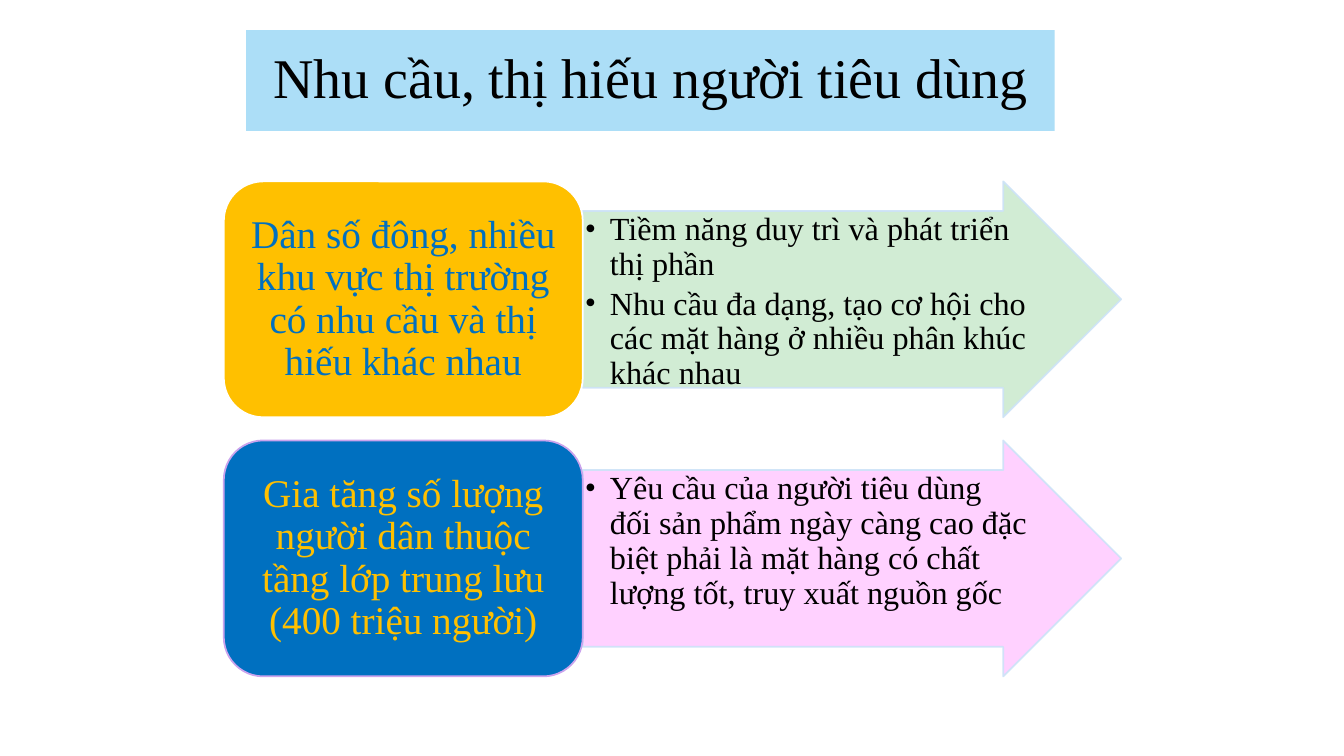
from lxml.etree import SubElement
from pptx import Presentation
from pptx.dml.color import RGBColor
from pptx.enum.shapes import MSO_SHAPE
from pptx.enum.text import MSO_ANCHOR, PP_ALIGN
from pptx.oxml.ns import qn
from pptx.util import Inches, Pt

# Content
TITLE = "Nhu cầu, thị hiếu người tiêu dùng"
ROWS = [
    {
        "label": "Dân số đông, nhiều khu vực thị trường có nhu cầu và thị hiếu khác nhau",
        "points": [
            "Tiềm năng duy trì và phát triển thị phần",
            "Nhu cầu đa dạng, tạo cơ hội cho các mặt hàng ở nhiều phân khúc khác nhau",
        ],
        "box": "amber", "edge": "white", "ink": "blue", "arrow": "green",
    },
    {
        "label": "Gia tăng số lượng người dân thuộc tầng lớp trung lưu (400 triệu người)",
        "points": [
            "Yêu cầu của người tiêu dùng đối sản phẩm ngày càng cao đặc biệt phải là "
            "mặt hàng có chất lượng tốt, truy xuất nguồn gốc",
        ],
        "box": "blue", "edge": "lilac", "ink": "amber", "arrow": "pink",
    },
]
COLORS = {
    "sky": "ACDEF7", "black": "000000", "white": "FFFFFF", "amber": "FFC000",
    "blue": "0070C0", "green": "CDEBD0", "pink": "FFCCFF", "pale": "CDE3F8",
    "lilac": "CAA3ED",
}
FONT = "Times New Roman"

# Layout, in inches
LEFT, TOP = 2.22, 1.8
BOX_W, ARROW_W = 3.56, 5.34
ROW_H, PITCH = 2.34, 2.57

deck = Presentation()
deck.slide_width, deck.slide_height = Inches(13.33), Inches(7.5)
slide = deck.slides.add_slide(deck.slide_layouts[6])


def tint(fill, color, alpha=None):
    fill.solid()
    fill.fore_color.rgb = RGBColor.from_string(COLORS[color])
    if alpha:
        node = fill._xPr.find(qn("a:solidFill"))[0]
        SubElement(node, qn("a:alpha"), val=str(alpha * 1000))


def add_box(kind, place, color, edge=None, alpha=None):
    shape = slide.shapes.add_shape(kind, *[Inches(v) for v in place])
    shape.shadow.inherit = False
    tint(shape.fill, color, alpha)
    if edge:
        tint(shape.line.fill, edge, alpha)
        shape.line.width = Pt(1.25)
    else:
        shape.line.fill.background()
    return shape


def write(shape, lines, size, color="black", pads=(0, 0, 0, 0), bullet=False):
    frame = shape.text_frame
    frame.word_wrap = True
    frame.vertical_anchor = MSO_ANCHOR.TOP if bullet else MSO_ANCHOR.MIDDLE
    (frame.margin_left, frame.margin_top,
     frame.margin_right, frame.margin_bottom) = [Inches(v) for v in pads]
    for i, line in enumerate(lines):
        para = frame.paragraphs[0] if i == 0 else frame.add_paragraph()
        para.alignment = PP_ALIGN.LEFT if bullet else PP_ALIGN.CENTER
        para.line_spacing = 0.9
        if bullet:
            para.level = 1
            para.space_after = Pt(3.5)
            props = para._p.get_or_add_pPr()
            props.set("marL", str(Inches(0.25)))
            props.set("indent", str(-Inches(0.25)))
            SubElement(props, qn("a:buFont"), typeface=FONT)
            SubElement(props, qn("a:buChar"), char="•")
        run = para.add_run()
        run.text = line
        run.font.name, run.font.size = FONT, Pt(size)
        run.font.color.rgb = RGBColor.from_string(COLORS[color])


# Title band
band = add_box(MSO_SHAPE.RECTANGLE, (2.44, 0.3, 8.02, 1), "sky")
write(band, [TITLE], 40, pads=(0.16,) * 4)

# Rows: an arrow with points beside a rounded label
for i, row in enumerate(ROWS):
    top = TOP + i * PITCH
    arrow = add_box(MSO_SHAPE.RIGHT_ARROW, (LEFT + BOX_W, top, ARROW_W, ROW_H),
                    row["arrow"], "pale", alpha=90)
    arrow.adjustments[0], arrow.adjustments[1] = 0.75, 0.5
    write(arrow, row["points"], 23, pads=(0.02,) * 4, bullet=True)

    label = add_box(MSO_SHAPE.ROUNDED_RECTANGLE, (LEFT, top, BOX_W, ROW_H),
                    row["box"], row["edge"])
    write(label, [row["label"]], 28, row["ink"], pads=(0.12, 0.06, 0.12, 0.06))

deck.save("out.pptx")
